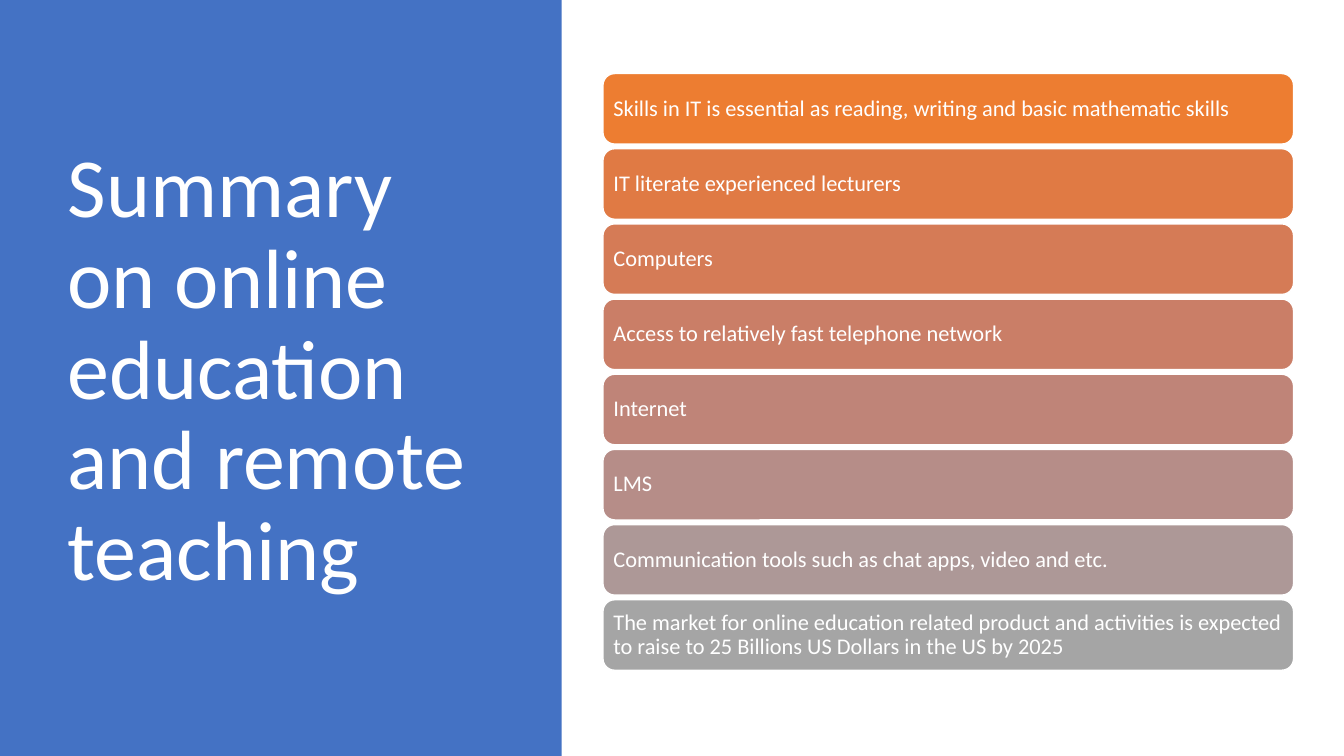
"""Build the summary slide on online education and remote teaching."""
from pptx import Presentation
from pptx.dml.color import RGBColor
from pptx.enum.shapes import MSO_SHAPE
from pptx.enum.text import MSO_ANCHOR, MSO_AUTO_SIZE, PP_ALIGN
from pptx.util import Inches, Pt

RECTANGLE = MSO_SHAPE.RECTANGLE
ROUNDED = MSO_SHAPE.ROUNDED_RECTANGLE
MIDDLE = MSO_ANCHOR.MIDDLE
NO_FIT = MSO_AUTO_SIZE.NONE
LEFT = PP_ALIGN.LEFT

WHITE = RGBColor(0xFF, 0xFF, 0xFF)
BLUE = RGBColor(0x44, 0x72, 0xC4)

POINTS = [
    ("Skills in IT is essential as reading, writing and basic mathematic skills",
     RGBColor(0xED, 0x7D, 0x31)),
    ("IT literate experienced lecturers", RGBColor(0xE0, 0x7A, 0x44)),
    ("Computers", RGBColor(0xD5, 0x7B, 0x56)),
    ("Access to relatively fast telephone network", RGBColor(0xCA, 0x7E, 0x67)),
    ("Internet", RGBColor(0xBF, 0x84, 0x78)),
    ("LMS", RGBColor(0xB6, 0x8D, 0x88)),
    ("Communication tools such as chat apps, video and etc.",
     RGBColor(0xAD, 0x98, 0x97)),
    ("The market for online education related product and activities is expected "
     "to raise to 25 Billions US Dollars in the US by 2025",
     RGBColor(0xA5, 0xA5, 0xA5)),
]
FIRST_TOP, LAST_TOP = Inches(0.73), Inches(5.95)
PITCH = (LAST_TOP - FIRST_TOP) / (len(POINTS) - 1)


def write(shape, text, size, inset_x, inset_y):
    frame = shape.text_frame
    frame.text = text
    frame.word_wrap = True
    frame.auto_size = NO_FIT
    frame.vertical_anchor = MIDDLE
    frame.margin_left = frame.margin_right = inset_x
    frame.margin_top = frame.margin_bottom = inset_y
    para = frame.paragraphs[0]
    para.alignment = LEFT
    para.line_spacing = 0.9
    para.font.name = "Calibri"
    para.font.size = Pt(size)
    para.font.color.rgb = WHITE


deck = Presentation()
deck.slide_width, deck.slide_height = Inches(13.33), Inches(7.5)
page = deck.slides.add_slide(deck.slide_layouts[5])

panel = page.shapes.add_shape(RECTANGLE, 0, 0, Inches(5.57), deck.slide_height)
panel.shadow.inherit = False
panel.fill.solid()
panel.fill.fore_color.rgb = BLUE
panel.line.fill.background()

title = page.shapes.title
title.element.addprevious(panel.element)
title.left, title.top = Inches(0.57), Inches(0.68)
title.width, title.height = Inches(4.16), Inches(6.02)
write(title, "Summary on online education and remote teaching", 60,
      Inches(0.1), Inches(0.05))

for index, (text, color) in enumerate(POINTS):
    bar = page.shapes.add_shape(ROUNDED, Inches(5.98), round(FIRST_TOP + index * PITCH),
                                Inches(6.85), Inches(0.7))
    bar.shadow.inherit = False
    bar.fill.solid()
    bar.fill.fore_color.rgb = color
    bar.line.color.rgb = WHITE
    bar.line.width = Pt(1)
    write(bar, text, 16, Inches(0.07), Inches(0.07))

deck.save("out.pptx")
